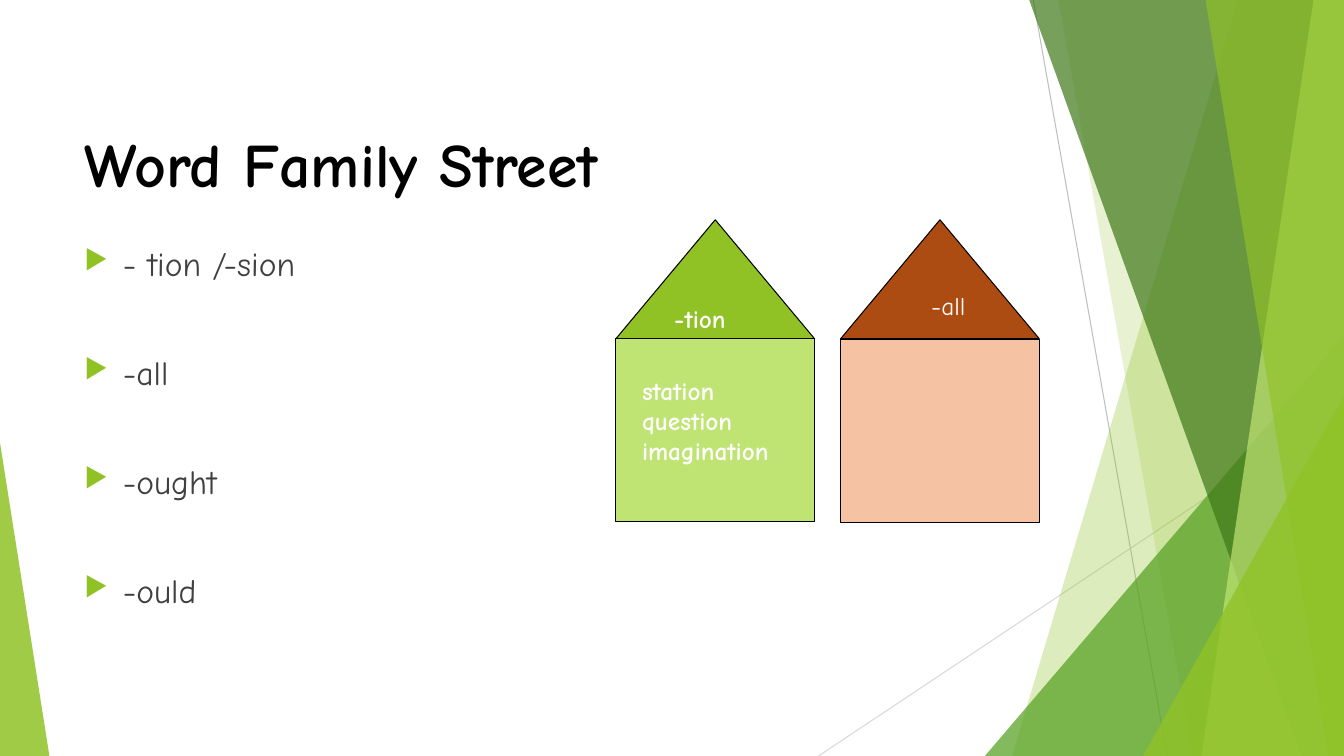
from lxml.etree import SubElement
from pptx import Presentation
from pptx.dml.color import RGBColor
from pptx.enum.shapes import MSO_CONNECTOR, MSO_SHAPE
from pptx.oxml.ns import qn
from pptx.util import Inches, Pt

rgb = RGBColor.from_string
GREEN, PALE_GREEN, BLACK, WHITE = "90C226", "C0E474", "000000", "FFFFFF"

presentation = Presentation()
presentation.slide_width, presentation.slide_height = Inches(13.33), Inches(7.5)
slide = presentation.slides.add_slide(presentation.slide_layouts[6])
shapes = slide.shapes
column = presentation.slide_width / 100
row = presentation.slide_height / 100


def paint(shape, color, opacity=100, outline=None):
    shape.shadow.inherit = False
    shape.fill.solid()
    shape.fill.fore_color.rgb = rgb(color)
    if opacity < 100:
        tint = shape._element.spPr.find(qn("a:solidFill"))[0]
        SubElement(tint, qn("a:alpha"), val=str(opacity * 1000))
    if outline:
        shape.line.color.rgb = rgb(outline)
        shape.line.width = Pt(0.75)
    else:
        shape.line.fill.background()


def add_text(place, lines, size, color, bold=False, bullet=None, gap=0):
    """Add a text box; place is left, top, width, height in columns and rows."""
    left, top, width, height = place
    box = shapes.add_textbox(round(left * column), round(top * row),
                             round(width * column), round(height * row))
    frame = box.text_frame
    frame.word_wrap = True
    frame.text = "\n".join(lines)
    for index, paragraph in enumerate(frame.paragraphs):
        if index and gap:
            paragraph.space_before = Pt(gap)
        if bullet:
            properties = paragraph._p.get_or_add_pPr()
            properties.set("marL", str(Inches(0.38)))
            properties.set("indent", str(Inches(-0.38)))
            bullet_color = SubElement(properties, qn("a:buClr"))
            SubElement(bullet_color, qn("a:srgbClr"), val=GREEN)
            SubElement(properties, qn("a:buSzPct"), val="80000")
            SubElement(properties, qn("a:buChar"), char=bullet)
        font = paragraph.runs[0].font
        for name, value in {"name": "Comic Neue", "size": Pt(size), "bold": bold}.items():
            setattr(font, name, value)
        font.color.rgb = rgb(color)


# Thin lines behind the panels: start x, start y, end x, end y, colour
for x1, y1, x2, y2, color in [(76.88, 0, 86.85, 100, "BFBFBF"),
                              (100, 53.73, 60.9, 100, "D9D9D9")]:
    line = shapes.add_connector(MSO_CONNECTOR.STRAIGHT, round(x1 * column),
                                round(y1 * row), round(x2 * column), round(y2 * row))
    line.line.color.rgb = rgb(color)
    line.line.width = Pt(0.75)
    SubElement(line._element.spPr, qn("a:effectLst"))

# Panels reach the right edge: top-left x (None for a triangle), bottom-left x, peak y
panels = [
    (92.1, 75.3, 0, GREEN, 30),
    (78.75, 88.73, 0, GREEN, 20),
    (None, 73.28, 44.4, "54A021", 72),
    (76.58, 96.83, 0, "3F7819", 70),
    (97.73, 89.4, 0, PALE_GREEN, 70),
    (89.7, 98.85, 0, GREEN, 65),
    (None, 85.05, 52.4, GREEN, 80),
]
for top_x, bottom_x, peak, color, opacity in panels:
    if top_x is None:
        panel = shapes.add_shape(MSO_SHAPE.ISOSCELES_TRIANGLE, round(bottom_x * column),
                                 round(peak * row), round((100 - bottom_x) * column),
                                 round((100 - peak) * row))
        panel.adjustments[0] = 1
    else:
        builder = shapes.build_freeform(round(top_x * column), 0)
        builder.add_line_segments([(round(x * column), round(y * row)) for x, y in
                                   [(100, 0), (100, 100), (bottom_x, 100)]])
        panel = builder.convert_to_shape()
    paint(panel, color, opacity)

corner = shapes.add_shape(MSO_SHAPE.ISOSCELES_TRIANGLE, 0, round(58.53 * row),
                          round(3.68 * column), round(41.47 * row))
corner.adjustments[0] = 0
paint(corner, GREEN, 85)

add_text((5.55, 16, 70.5, 10.67), ["Word Family Street"], 44.1, BLACK, bold=True)
add_text((5.55, 31.47, 70.5, 56.53), ["- tion /-sion", "-all", "-ought", "-ould"],
         24, "404040", bullet="▶", gap=49)

# Houses: left, wall top, roof colour, wall colour
for left, wall_top, roof_color, wall_color in [(45.83, 44.8, GREEN, PALE_GREEN),
                                               (62.55, 44.93, "AD4C12", "F5C2A3")]:
    for kind, top, height, color in [
            (MSO_SHAPE.ISOSCELES_TRIANGLE, 29.07, 15.73, roof_color),
            (MSO_SHAPE.RECTANGLE, wall_top, 24.13, wall_color)]:
        part = shapes.add_shape(kind, round(left * column), round(top * row),
                                round(14.78 * column), round(height * row))
        paint(part, color, outline=BLACK)

add_text((49.43, 39.47, 7.65, 5.33), ["-tion"], 18, WHITE, bold=True)
add_text((47.03, 48.93, 12.98, 21.47), ["station", "question", "imagination"],
         18, WHITE, bold=True)
add_text((68.55, 37.73, 4.73, 5.33), ["-all"], 18, WHITE)

presentation.save("out.pptx")
